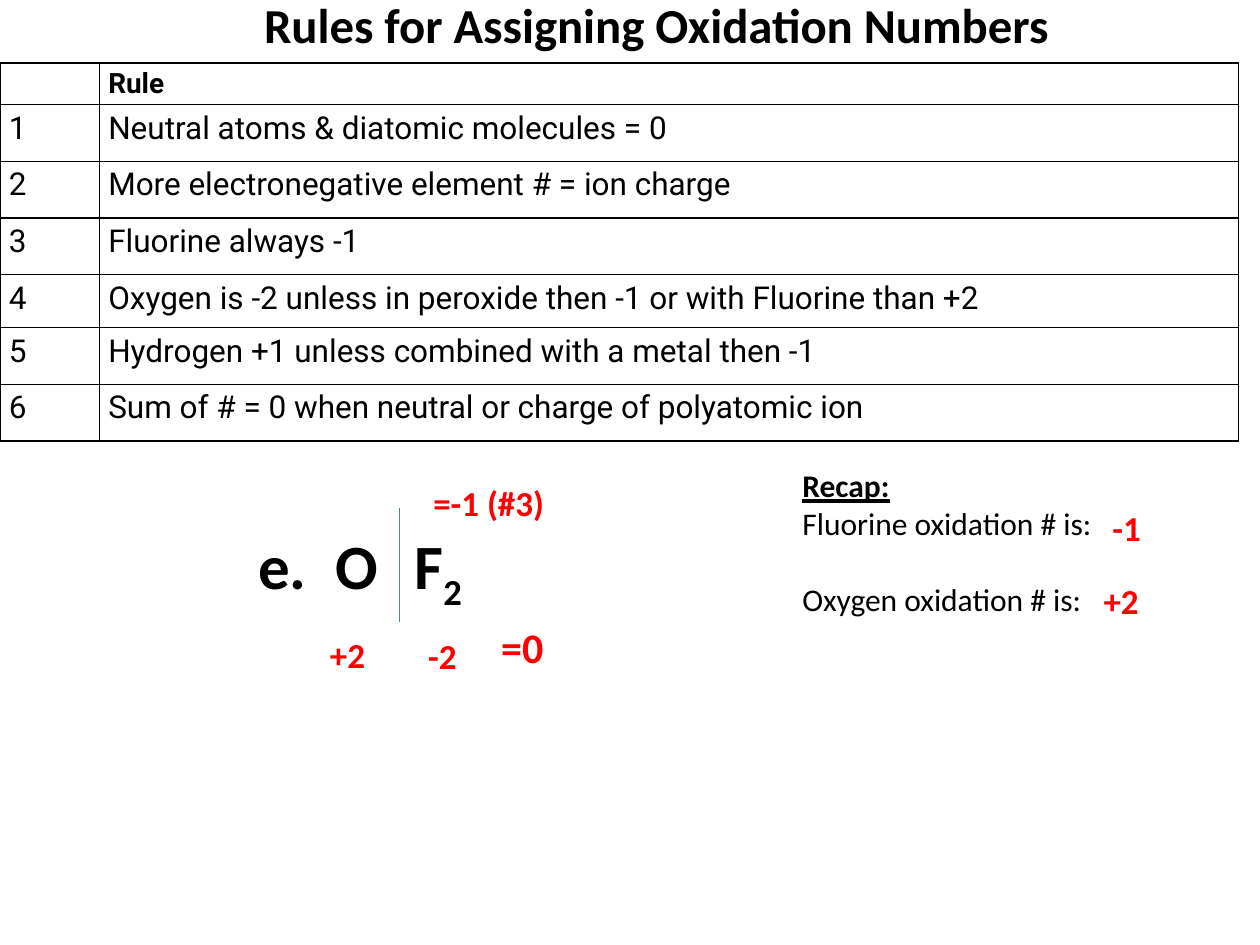
from dataclasses import dataclass

from lxml.etree import SubElement
from pptx import Presentation
from pptx.dml.color import RGBColor
from pptx.enum.shapes import MSO_CONNECTOR
from pptx.enum.text import MSO_ANCHOR, PP_ALIGN
from pptx.oxml.ns import qn
from pptx.util import Inches, Pt


@dataclass(frozen=True)
class Theme:
    black: RGBColor = RGBColor(0, 0, 0)
    white: RGBColor = RGBColor(255, 255, 255)
    answer: RGBColor = RGBColor(255, 0, 0)
    divider: RGBColor = RGBColor(0x4B, 0x7E, 0xBC)
    body_font: str = "Calibri"
    table_font: str = "Roboto"
    title_size: float = 27.9
    formula_size: int = 36
    total_size: int = 24
    answer_size: int = 20
    body_size: int = 18
    header_size: int = 16


@dataclass(frozen=True)
class Area:
    """A place on a grid of 40 columns by 30 rows."""
    column: float
    row: float
    columns: float
    rows: float


@dataclass(frozen=True)
class Answer:
    text: str
    area: Area
    size: int


THEME = Theme()
SLIDE_COLUMNS, SLIDE_ROWS = 40, 30

RULES = [
    "Neutral atoms & diatomic molecules = 0",
    "More electronegative element # = ion charge",
    "Fluorine always -1",
    "Oxygen is -2 unless in peroxide then -1 or with Fluorine than +2",
    "Hydrogen +1 unless combined with a metal then -1",
    "Sum of # = 0 when neutral or charge of polyatomic ion",
]
TABLE_AREA = Area(0, 2, 39.32, 12)
TABLE_COLUMNS = [3.16, 36.16]
TABLE_ROWS = [1.32, 1.8, 1.8, 1.8, 1.68, 1.8, 1.8]

ANSWERS = [
    Answer("=-1 (#3)", Area(13.36, 15.08, 4.36, 1.76), THEME.answer_size),
    Answer("-2", Area(13.2, 19.96, 1.72, 1.76), THEME.answer_size),
    Answer("=0", Area(15.52, 19.52, 2.16, 2), THEME.total_size),
    Answer("+2", Area(10.08, 19.92, 1.92, 1.76), THEME.answer_size),
    Answer("-1", Area(34.92, 15.88, 1.72, 1.76), THEME.answer_size),
    Answer("+2", Area(34.64, 18.2, 1.92, 1.76), THEME.answer_size),
]


def grid(cells: float) -> int:
    return Inches(cells * 10 / SLIDE_COLUMNS)


def style(paragraph, size: float, bold: bool = False,
          color: RGBColor = THEME.black, name: str = THEME.body_font) -> None:
    font = paragraph.font
    font.name, font.size, font.bold = name, Pt(size), bold
    font.color.rgb = color


def add_text_frame(slide, area: Area, wrap: bool = False):
    box = slide.shapes.add_textbox(grid(area.column), grid(area.row),
                                   grid(area.columns), grid(area.rows))
    box.text_frame.word_wrap = wrap
    return box.text_frame


def add_title(slide) -> None:
    frame = add_text_frame(slide, Area(3, 0, 35.68, 1.52), wrap=True)
    frame.margin_top = frame.margin_bottom = 0
    frame.vertical_anchor = MSO_ANCHOR.MIDDLE
    paragraph = frame.paragraphs[0]
    paragraph.text = "Rules for Assigning Oxidation Numbers"
    paragraph.alignment = PP_ALIGN.CENTER
    style(paragraph, THEME.title_size, bold=True)


def add_borders(cell) -> None:
    properties = cell._tc.get_or_add_tcPr()
    for position, side in enumerate(("a:lnL", "a:lnR", "a:lnT", "a:lnB")):
        line = SubElement(properties, qn(side), w=str(Pt(1)))
        fill = SubElement(line, qn("a:solidFill"))
        SubElement(fill, qn("a:srgbClr"), val=str(THEME.black))
        properties.insert(position, line)


def add_rules_table(slide) -> None:
    contents = [("", "Rule")]
    contents += [(str(number), rule) for number, rule in enumerate(RULES, 1)]
    area = TABLE_AREA
    table = slide.shapes.add_table(
        len(TABLE_ROWS), len(TABLE_COLUMNS), grid(area.column), grid(area.row),
        grid(area.columns), grid(area.rows)).table
    table.first_row = table.horz_banding = False
    for column, width in zip(table.columns, TABLE_COLUMNS):
        column.width = grid(width)
    for row, height, texts in zip(table.rows, TABLE_ROWS, contents):
        row.height = grid(height)
        header = texts == contents[0]
        for cell, text in zip(row.cells, texts):
            cell.margin_left = cell.margin_right = Inches(0.07)
            cell.margin_top = cell.margin_bottom = 0
            cell.fill.solid()
            cell.fill.fore_color.rgb = THEME.white
            add_borders(cell)
            paragraph = cell.text_frame.paragraphs[0]
            if text:
                paragraph.text = text
            paragraph.line_spacing = 1.15
            style(paragraph, THEME.header_size if header else THEME.body_size,
                  bold=header, name=THEME.table_font)


def add_formula(slide) -> None:
    frame = add_text_frame(slide, Area(7.48, 16.52, 12.2, 2.84), wrap=True)
    frame.margin_left = Inches(0.18)
    paragraph = frame.paragraphs[0]
    style(paragraph, THEME.formula_size, bold=True)
    # Tab stops line up the two element symbols
    tabs = SubElement(paragraph._p.get_or_add_pPr(), qn("a:tabLst"))
    paragraph._p.pPr.insert(0, tabs)
    for stop in (0.61, 1.24):
        SubElement(tabs, qn("a:tab"), pos=str(Inches(stop)), algn="l")
    paragraph.add_run().text = "e.\tO\tF"
    subscript = paragraph.add_run()
    subscript.text = "2"
    subscript.font._element.set("baseline", "-25000")


def add_divider(slide) -> None:
    column = grid(12.68)
    line = slide.shapes.add_connector(MSO_CONNECTOR.STRAIGHT, column,
                                      grid(16.12), column, grid(19.76))
    line.line.color.rgb = THEME.divider
    line.line.width = Pt(0.75)
    SubElement(line._element.spPr, qn("a:effectLst"))


def add_answer(slide, answer: Answer) -> None:
    paragraph = add_text_frame(slide, answer.area).paragraphs[0]
    paragraph.text = answer.text
    style(paragraph, answer.size, bold=True, color=THEME.answer)


def add_recap(slide) -> None:
    frame = add_text_frame(slide, Area(25.08, 14.6, 10.12, 6.48))
    frame.text = "Recap:\nFluorine oxidation # is:\nOxygen oxidation # is:"
    heading, _, oxygen = frame.paragraphs
    for paragraph in frame.paragraphs:
        style(paragraph, THEME.body_size, bold=paragraph.text == heading.text)
    heading.font.underline = True
    oxygen.space_before = Pt(22)


def main() -> None:
    presentation = Presentation()
    presentation.slide_width = grid(SLIDE_COLUMNS)
    presentation.slide_height = grid(SLIDE_ROWS)
    slide = presentation.slides.add_slide(presentation.slide_layouts[6])

    # Rules
    add_title(slide)
    add_rules_table(slide)

    # Worked example and recap
    add_formula(slide)
    add_divider(slide)
    add_recap(slide)
    for answer in ANSWERS:
        add_answer(slide, answer)

    presentation.save("out.pptx")


if __name__ == "__main__":
    main()
